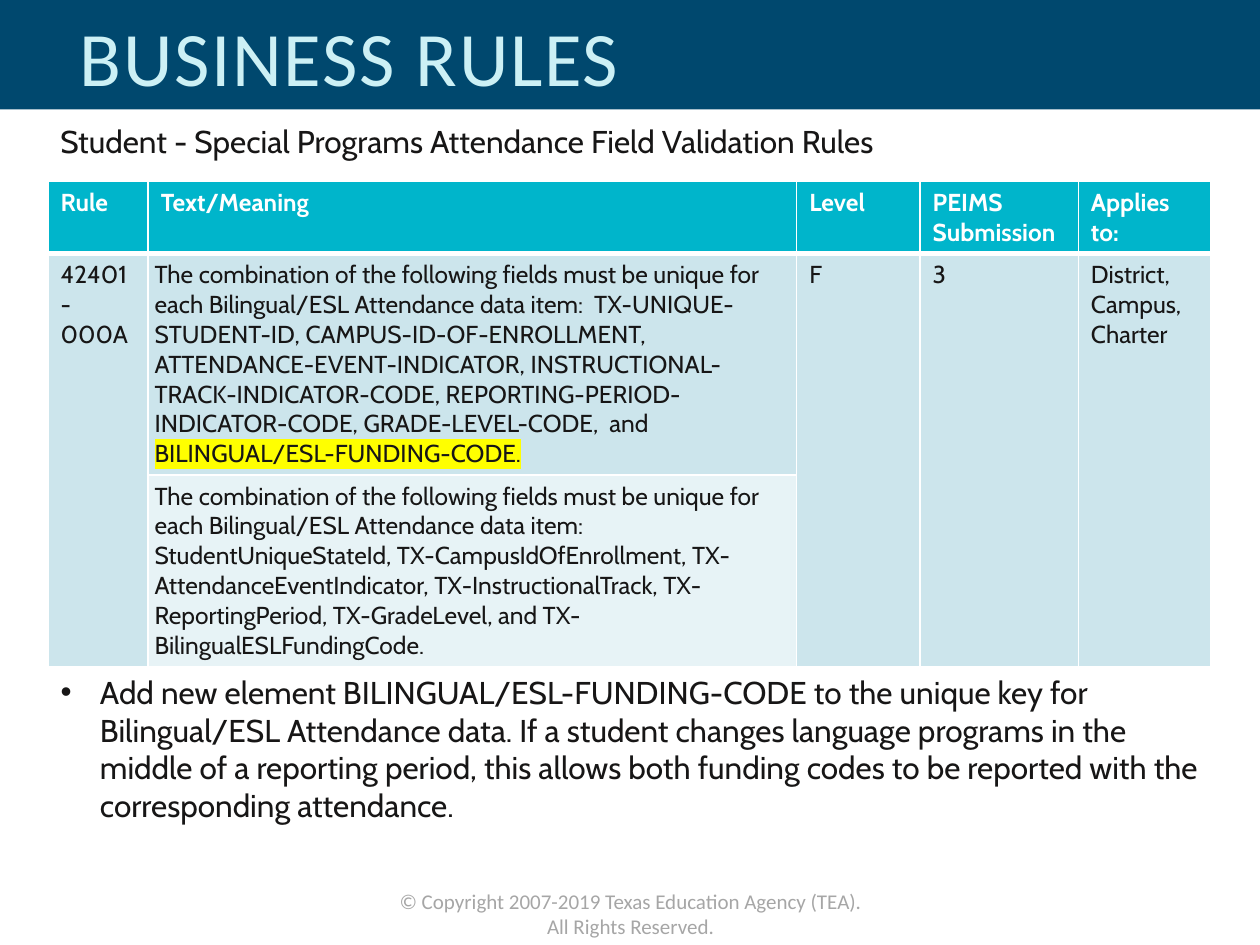
from lxml import etree
from pptx import Presentation
from pptx.dml.color import RGBColor
from pptx.enum import shapes, text
from pptx.oxml.ns import qn
from pptx.util import Pt

NAVY = RGBColor(0x00, 0x48, 0x6E)
ICE = RGBColor(0xCC, 0xF0, 0xF5)
TEAL = RGBColor(0x00, 0xB5, 0xCB)
PALE = RGBColor(0xCC, 0xE5, 0xEC)
MIST = RGBColor(0xE7, 0xF3, 0xF6)
INK = RGBColor(0x17, 0x16, 0x16)
GREY = RGBColor(0xA6, 0xA6, 0xA6)
WHITE = RGBColor(0xFF, 0xFF, 0xFF)
YELLOW = RGBColor(0xFF, 0xFF, 0x00)

TITLE = "BUSINESS RULES"
LEAD = "Student - Special Programs Attendance Field Validation Rules"
NOTE = (
    "Add new element BILINGUAL/ESL-FUNDING-CODE to the unique key for "
    "Bilingual/ESL Attendance data. If a student changes language programs in "
    "the middle of a reporting period, this allows both funding codes to be "
    "reported with the corresponding attendance."
)
RIGHTS = "© Copyright 2007-2019 Texas Education Agency (TEA). All Rights Reserved."
OLD = (
    "The combination of the following fields must be unique for each "
    "Bilingual/ESL Attendance data item:  TX-UNIQUE-STUDENT-ID, "
    "CAMPUS-ID-OF-ENROLLMENT, ATTENDANCE-EVENT-INDICATOR, "
    "INSTRUCTIONAL-TRACK-INDICATOR-CODE, REPORTING-PERIOD-INDICATOR-CODE, "
    "GRADE-LEVEL-CODE,  and "
)
ADDED = "BILINGUAL/ESL-FUNDING-CODE."
NEW = (
    "The combination of the following fields must be unique for each "
    "Bilingual/ESL Attendance data item: StudentUniqueStateId, "
    "TX-CampusIdOfEnrollment, TX-AttendanceEventIndicator, "
    "TX-InstructionalTrack, TX-ReportingPeriod, TX-GradeLevel, and "
    "TX-BilingualESLFundingCode."
)

# Each cell is a list of paragraphs; None continues the cell above.
ROWS = [
    [["Rule"], ["Text/Meaning"], ["Level"], ["PEIMS", "Submission"], ["Applies to:"]],
    [["42401-000A"], [OLD], ["F"], ["3"], ["District,", "Campus,", "Charter"]],
    [None, [NEW], None, None, None],
]
FILLS = [TEAL, PALE, MIST]
WIDTHS = [57.3, 370.6, 70.5, 90.4, 75.6]
HEIGHTS = [40.5, 126, 109]
RULE_COL = 1
LEFT, WIDE = 27.4, 664.4


def place(shape, left, top, width, height):
    shape.left, shape.top = Pt(left), Pt(top)
    shape.width, shape.height = Pt(width), Pt(height)


def add_run(para, words, size, color, face="Cabin", bold=False):
    run = para.add_run()
    run.text = words
    font = run.font
    font.size, font.name, font.bold = Pt(size), face, bold
    font.color.rgb = color
    return run


def mark(run, color):
    """Highlight a run."""
    tint = etree.Element(qn("a:highlight"))
    etree.SubElement(tint, qn("a:srgbClr"), val=str(color))
    run.font._element.find(qn("a:solidFill")).addnext(tint)


def edge(cell, low):
    """Draw white cell borders, the lower one `low` points wide."""
    props = cell._tc.get_or_add_tcPr()
    for i, side in enumerate("LRTB"):
        wide = low if side == "B" else 1
        line = etree.Element(qn("a:ln" + side), w=str(Pt(wide)))
        fill = etree.SubElement(line, qn("a:solidFill"))
        etree.SubElement(fill, qn("a:srgbClr"), val=str(WHITE))
        props.insert(i, line)


def add_box(slide, left, top, width, height):
    box = slide.shapes.add_textbox(Pt(left), Pt(top), Pt(width), Pt(height))
    box.text_frame.word_wrap = True
    return box.text_frame.paragraphs[0]


def add_banner(slide):
    bar = slide.shapes.add_shape(
        shapes.MSO_SHAPE.RECTANGLE, 0, 0, Pt(720), Pt(62.6))
    bar.shadow.inherit = False
    bar.fill.solid()
    bar.fill.fore_color.rgb = NAVY
    bar.line.fill.background()
    slide.shapes._spTree.insert(2, bar._element)  # behind the title


def add_title(slide):
    title = slide.shapes.title
    place(title, 38.2, 3.6, 596, 62.6)
    frame = title.text_frame
    frame.auto_size = text.MSO_AUTO_SIZE.NONE
    frame.vertical_anchor = text.MSO_ANCHOR.MIDDLE
    para = frame.paragraphs[0]
    para.alignment = text.PP_ALIGN.LEFT
    para.line_spacing = 0.9
    run = add_run(para, TITLE, 44, ICE, "Calibri")
    run.font._element.set("spc", "100")


def add_rules(slide):
    table = slide.shapes.add_table(
        len(ROWS), len(WIDTHS), Pt(LEFT), Pt(103.7), Pt(WIDE), Pt(sum(HEIGHTS))
    ).table
    for col, width in zip(table.columns, WIDTHS):
        col.width = Pt(width)
    for row, height in zip(table.rows, HEIGHTS):
        row.height = Pt(height)
    for r, row in enumerate(ROWS):
        for c, lines in enumerate(row):
            cell = table.cell(r, c)
            edge(cell, 3 if r == 0 else 1)
            cell.fill.solid()
            cell.fill.fore_color.rgb = FILLS[r] if lines else PALE
            if lines is None:
                table.cell(r - 1, c).merge(cell)
                continue
            if r and c == RULE_COL:
                cell.margin_left = cell.margin_right = Pt(3.6)
            frame = cell.text_frame
            for i, line in enumerate(lines):
                para = frame.add_paragraph() if i else frame.paragraphs[0]
                add_run(para, line, 14, INK if r else WHITE, bold=r == 0)
                if line == OLD:
                    mark(add_run(para, ADDED, 14, INK), YELLOW)


def add_note(slide):
    body = slide.placeholders[1]
    place(body, LEFT, 380.9, WIDE, 94.3)
    body.text_frame.auto_size = text.MSO_AUTO_SIZE.NONE
    para = body.text_frame.paragraphs[0]
    props = para._p.get_or_add_pPr()
    props.set("marL", str(Pt(22.5)))
    props.set("indent", str(Pt(-22.5)))
    etree.SubElement(props, qn("a:buFont"), typeface="Arial")
    etree.SubElement(props, qn("a:buChar"), char="•")
    para.space_before = Pt(0)
    add_run(para, NOTE, 18, INK)


def main():
    deck = Presentation()
    deck.slide_width, deck.slide_height = Pt(720), Pt(540)
    slide = deck.slides.add_slide(deck.slide_layouts[1])
    add_banner(slide)
    add_title(slide)
    add_rules(slide)
    add_run(add_box(slide, LEFT, 66.2, 590.4, 29), LEAD, 18, INK)
    add_note(slide)
    foot = add_box(slide, 218.9, 504, 283, 21.6)
    foot.alignment = text.PP_ALIGN.CENTER
    add_run(foot, RIGHTS, 12, GREY, "Calibri")
    deck.save("out.pptx")


if __name__ == "__main__":
    main()
